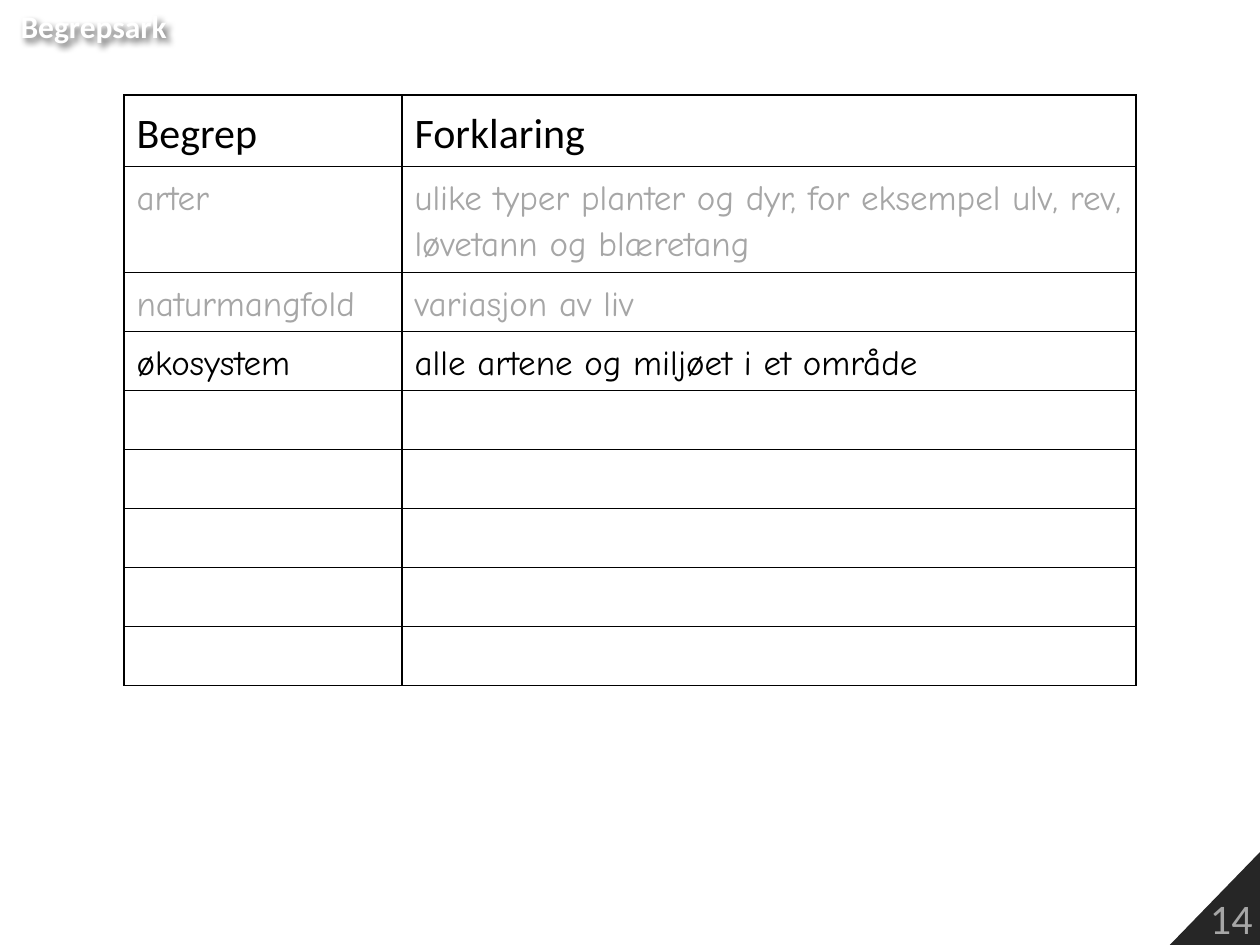
from dataclasses import dataclass

from lxml.etree import SubElement
from pptx import Presentation
from pptx.dml.color import RGBColor
from pptx.enum.text import MSO_ANCHOR as Anchor, MSO_AUTO_SIZE as AutoSize, PP_ALIGN as Align
from pptx.oxml import parse_xml
from pptx.oxml.ns import nsdecls, qn
from pptx.util import Emu, Pt

PX = 914400 / 126


@dataclass(frozen=True)
class Theme:
    heading_font: str = "Calibri"
    body_font: str = "Comic Neue"
    white: str = "FFFFFF"
    black: str = "000000"
    grey: str = "A6A6A6"
    corner: str = "262626"
    title_size: int = 18
    head_size: int = 24
    body_size: int = 20
    line_spacing: float = 1.15


THEME = Theme()

# Term, explanation, text colour
TERMS = [
    ("arter", "ulike typer planter og dyr, for eksempel ulv, rev, løvetann og blæretang", THEME.grey),
    ("naturmangfold", "variasjon av liv", THEME.grey),
    ("økosystem", "alle artene og miljøet i et område", THEME.black),
]
EMPTY_ROWS = 5
COLUMN_WIDTHS = (278, 734)
HEAD_HEIGHT, TALL_HEIGHT, ROW_HEIGHT = 71, 106, 59


def px(value):
    return Emu(round(value * PX))


def apply(target, values):
    for name, value in values.items():
        setattr(target, name, value)


def write(frame, text, font, size, color, bold=False, **para_format):
    """Fill the first paragraph of a frame with one formatted span."""
    para = frame.paragraphs[0]
    apply(para, para_format)
    span = para.add_run()
    span.text = text
    apply(span.font, {"name": font, "size": Pt(size), "bold": bold})
    span.font.color.rgb = RGBColor.from_string(color)


def add_shadow(box):
    """Give an unfilled box a soft shadow, which falls from its text."""
    box.fill.background()
    box.line.fill.background()
    box._element.spPr.append(parse_xml(
        f'<a:effectLst {nsdecls("a")}>'
        f'<a:outerShdw blurRad="{Pt(4)}" dist="{Pt(3)}" dir="2700000" algn="tl" rotWithShape="0">'
        f'<a:srgbClr val="{THEME.black}"><a:alpha val="60000"/></a:srgbClr>'
        '</a:outerShdw></a:effectLst>'))


def add_title(page, left, top, width, height):
    title = page.shapes.title
    apply(title, {"left": px(left), "top": px(top), "width": px(width), "height": px(height)})
    add_shadow(title)
    frame = title.text_frame
    apply(frame, {"word_wrap": False, "auto_size": AutoSize.NONE, "vertical_anchor": Anchor.TOP})
    write(frame, "Begrepsark", THEME.heading_font, THEME.title_size, THEME.white,
          bold=True, alignment=Align.LEFT)


def add_borders(cell):
    properties = cell._tc.get_or_add_tcPr()
    for index, side in enumerate(("lnL", "lnR", "lnT", "lnB")):
        line = SubElement(properties, qn(f"a:{side}"), w=str(Pt(1)))
        fill = SubElement(line, qn("a:solidFill"))
        SubElement(fill, qn("a:srgbClr"), val=THEME.black)
        properties.insert(index, line)


def add_term_table(page, left, top):
    heights = [HEAD_HEIGHT, TALL_HEIGHT] + [ROW_HEIGHT] * (len(TERMS) - 1 + EMPTY_ROWS)
    box = page.shapes.add_table(len(heights), len(COLUMN_WIDTHS), px(left), px(top),
                                px(sum(COLUMN_WIDTHS)), px(sum(heights)))
    table = box.table
    apply(table, {"first_row": False, "horz_banding": False})
    for column, width in zip(table.columns, COLUMN_WIDTHS):
        column.width = px(width)
    for row, height in zip(table.rows, heights):
        row.height = px(height)
    for cell in table.iter_cells():
        cell.fill.background()
        add_borders(cell)

    # Heading row
    for column, text in enumerate(("Begrep", "Forklaring")):
        cell = table.cell(0, column)
        cell.vertical_anchor = Anchor.MIDDLE
        write(cell.text_frame, text, THEME.heading_font, THEME.head_size, THEME.black,
              line_spacing=THEME.line_spacing)

    # Term rows
    for row, (term, meaning, color) in enumerate(TERMS, start=1):
        for column, text in enumerate((term, meaning)):
            write(table.cell(row, column).text_frame, text, THEME.body_font, THEME.body_size,
                  color, line_spacing=THEME.line_spacing)


def add_page_corner(page, left, top, width, height):
    right, bottom = left + width, top + height
    builder = page.shapes.build_freeform(left, bottom, scale=PX)
    builder.add_line_segments([(right, top), (right, bottom)], close=True)
    corner = builder.convert_to_shape()
    corner.shadow.inherit = False
    corner.fill.solid()
    corner.fill.fore_color.rgb = RGBColor.from_string(THEME.corner)
    corner.line.fill.background()
    frame = corner.text_frame
    apply(frame, {"word_wrap": True, "vertical_anchor": Anchor.BOTTOM})
    write(frame, "14", THEME.heading_font, THEME.head_size, THEME.grey, alignment=Align.RIGHT)


def main():
    deck = Presentation()
    apply(deck, {"slide_width": px(1260), "slide_height": px(945)})
    page = deck.slides.add_slide(deck.slide_layouts[5])
    add_page_corner(page, 1166, 847, 99, 102)
    add_term_table(page, 124, 95)
    add_title(page, 8, 1, 173, 50)
    deck.save("out.pptx")


if __name__ == "__main__":
    main()
